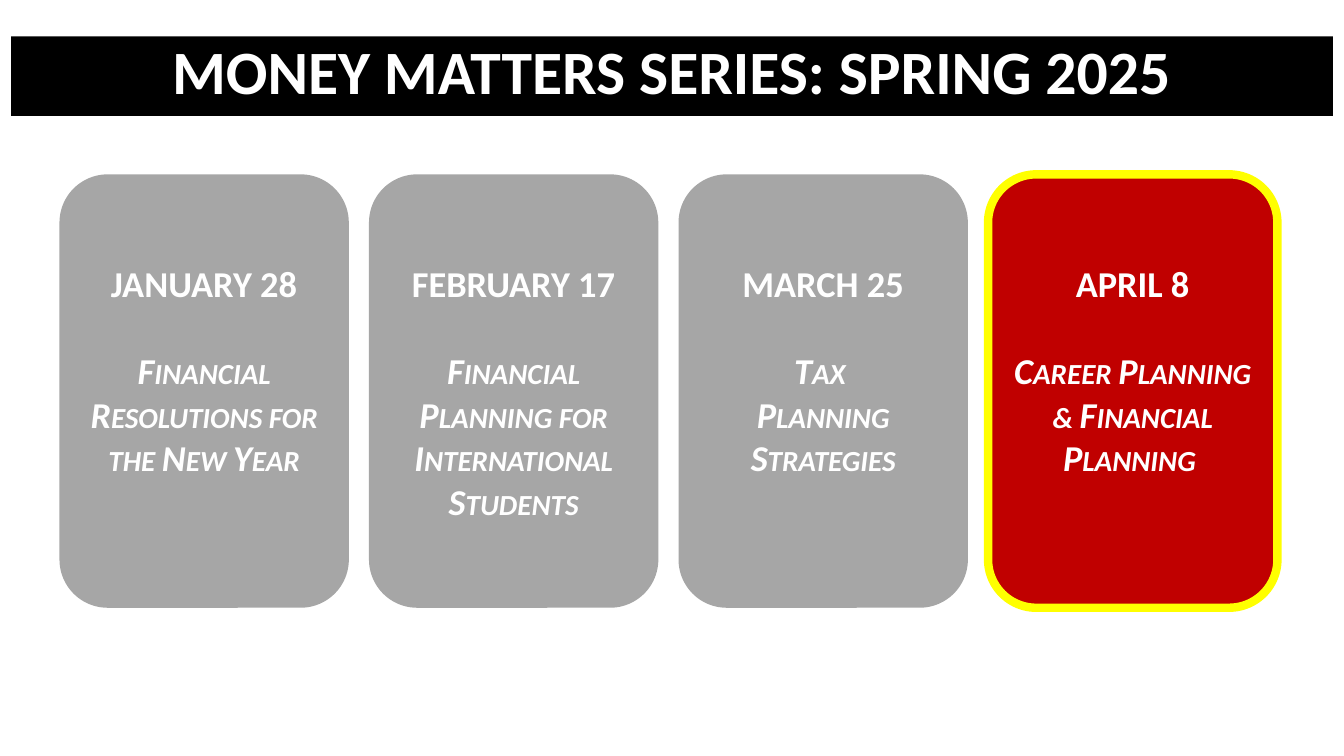
from pptx import Presentation
from pptx import util as u
from pptx.dml.color import RGBColor
from pptx.enum import shapes, text

COLORS = {"black": "000000", "white": "FFFFFF", "gray": "A6A6A6",
          "red": "C00000", "yellow": "FFFF00"}
CARD_LEFT, CARD_TOP, CARD_W, CARD_H, PITCH = 0.59, 1.73, 2.87, 4.3, 3.07
SESSIONS = [
    ("JANUARY 28", "Financial Resolutions for the New Year"),
    ("FEBRUARY 17", "Financial Planning for International Students"),
    ("MARCH 25", "Tax \vPlanning Strategies"),
    ("APRIL 8", "Career Planning\v& Financial Planning "),
]


def rgb(name):
    return RGBColor.from_string(COLORS[name])


def add_box(s, kind, left, top, width, height, fill, line=None):
    sp = s.shapes.add_shape(kind, *map(u.Inches, (left, top, width, height)))
    sp.shadow.inherit = False
    sp.fill.solid()
    sp.fill.fore_color.rgb = rgb(fill)
    if line:
        sp.line.color.rgb = rgb(line)
        sp.line.width = u.Pt(6)
    else:
        sp.line.fill.background()
    tf = sp.text_frame
    tf.word_wrap = True
    tf.vertical_anchor = text.MSO_ANCHOR.TOP
    return tf


def write(p, words, size, italic=False, small_caps=False, before=None, spacing=None):
    p.text = words
    p.alignment = text.PP_ALIGN.CENTER
    if before:
        p.space_before = u.Pt(before)
    if spacing:
        p.line_spacing = spacing
    for r in p.runs:
        r.font.name = "Calibri"
        r.font.size = u.Pt(size)
        r.font.bold = True
        r.font.italic = italic
        r.font.color.rgb = rgb("white")
        if small_caps:
            r.font._element.set("cap", "small")


def add_title(s, words):
    tf = add_box(s, shapes.MSO_SHAPE.RECTANGLE, 0.11, 0.36, 13.11, 0.79, "black")
    write(tf.paragraphs[0], words, 44, spacing=0.9)


def add_card(s, column, date, topic, fill="gray", line=None):
    tf = add_box(s, shapes.MSO_SHAPE.ROUNDED_RECTANGLE, CARD_LEFT + column * PITCH,
                 CARD_TOP, CARD_W, CARD_H, fill, line)
    tf.margin_top = u.Inches(0.72)
    tf.margin_left = tf.margin_right = u.Inches(0.05)
    write(tf.paragraphs[0], date, 26)
    write(tf.add_paragraph(), topic, 26, italic=True, small_caps=True, before=31)


def main():
    prs = Presentation()
    prs.slide_width, prs.slide_height = u.Inches(13.33), u.Inches(7.5)
    s = prs.slides.add_slide(prs.slide_layouts[6])
    add_title(s, "MONEY MATTERS SERIES: SPRING 2025")
    for column, (date, topic) in enumerate(SESSIONS):
        accent = {"fill": "red", "line": "yellow"} if date == "APRIL 8" else {}
        add_card(s, column, date, topic, **accent)
    prs.save("out.pptx")


if __name__ == "__main__":
    main()
